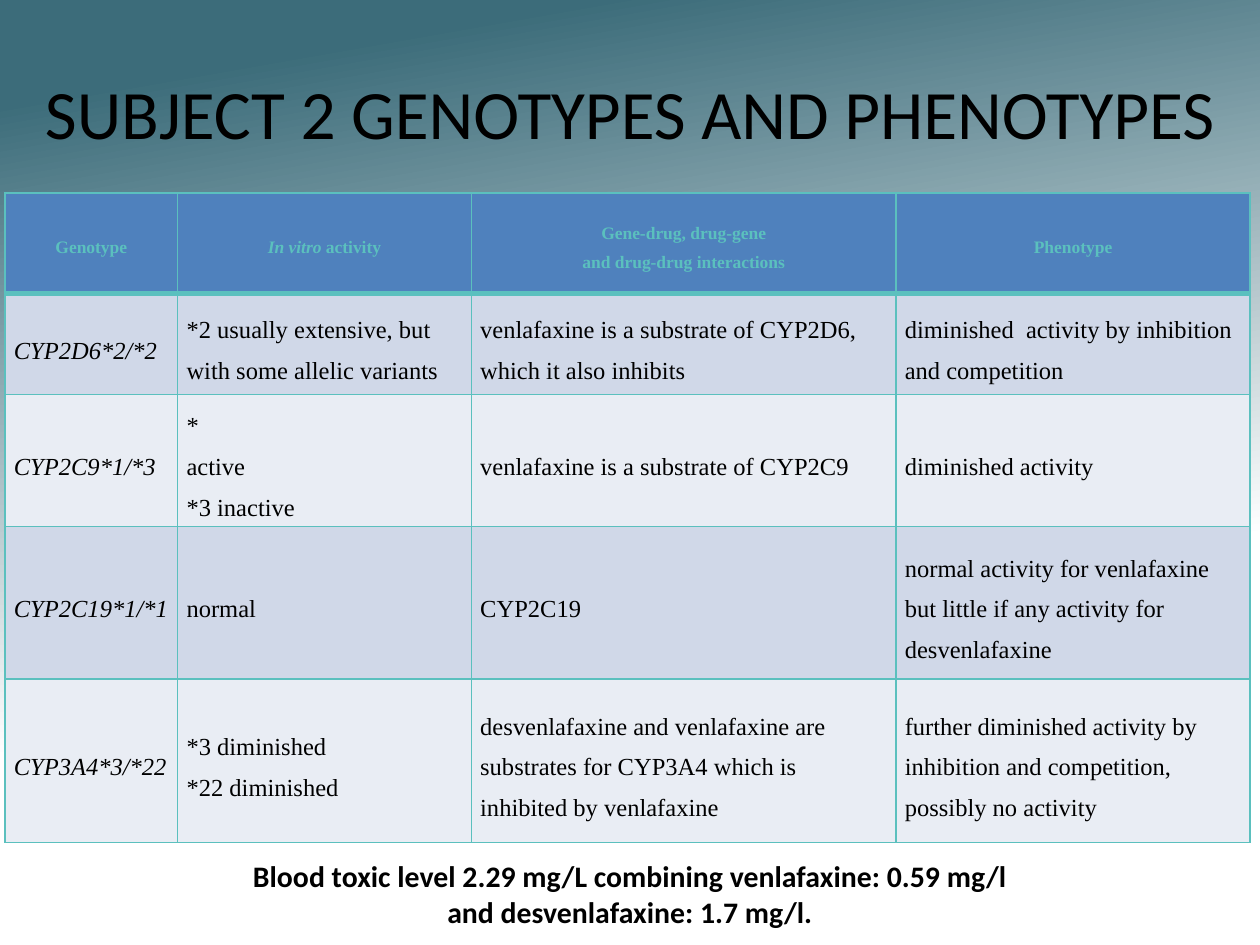
from lxml.etree import SubElement
from pptx import Presentation
from pptx.dml.color import RGBColor
from pptx.enum.text import MSO_ANCHOR, PP_ALIGN
from pptx.oxml import parse_xml
from pptx.oxml.ns import nsdecls
from pptx.util import Cm, Pt

BLACK = RGBColor(0x00, 0x00, 0x00)
WHITE = RGBColor(0xFF, 0xFF, 0xFF)
DEEP_TEAL = RGBColor(0x3C, 0x6C, 0x7A)
TURQUOISE = RGBColor(0x5B, 0xC0, 0xBE)
HEADER_BLUE = RGBColor(0x4F, 0x81, 0xBD)
BANDS = [RGBColor(0xD0, 0xD8, 0xE8), RGBColor(0xE9, 0xED, 0xF4)]

COLUMN_WIDTHS = [3.48, 5.92, 8.56, 7.14]
ROW_HEIGHTS = [2.03, 2.03, 2.03, 3.07, 3.3]
HEADINGS = ["Genotype", "In vitro activity",
            "Gene-drug, drug-gene\nand drug-drug interactions", "Phenotype"]
GENOTYPES = [
    ["CYP2D6*2/*2", "*2 usually extensive, but with some allelic variants",
     "venlafaxine is a substrate of CYP2D6, which it also inhibits",
     "diminished  activity by inhibition and competition"],
    ["CYP2C9*1/*3", "*\nactive\n*3 inactive",
     "venlafaxine is a substrate of CYP2C9", "diminished activity"],
    ["CYP2C19*1/*1", "normal", "CYP2C19",
     "normal activity for venlafaxine but little if any activity for desvenlafaxine"],
    ["CYP3A4*3/*22", "*3 diminished\n*22 diminished",
     "desvenlafaxine and venlafaxine are substrates for CYP3A4 which is inhibited by venlafaxine",
     "further diminished activity by inhibition and competition, possibly no activity"],
]


def style_paragraphs(frame, font_name, size, color, bold=False, italic=False,
                     align=PP_ALIGN.LEFT, spacing=1.0):
    for paragraph in frame.paragraphs:
        paragraph.alignment = align
        paragraph.line_spacing = spacing
        font = paragraph.font
        font.name, font.size = font_name, Pt(size)
        font.bold, font.italic = bold, italic
        font.color.rgb = color


def add_borders(cell, widths):
    """Draw the left, right, top and bottom borders, widths in points."""
    properties = cell._tc.get_or_add_tcPr()
    for index, (side, width) in enumerate(zip("LRTB", widths)):
        border = parse_xml(f'<a:ln{side} {nsdecls("a")} w="{Pt(width)}"><a:solidFill>'
                           f'<a:srgbClr val="{TURQUOISE}"/></a:solidFill></a:ln{side}>')
        properties.insert(index, border)


def fill_background(slide):
    fill = slide.background.fill
    fill.gradient()
    fill.gradient_angle = 280
    for stop, position, color in zip(fill.gradient_stops, (0.09, 0.65), (DEEP_TEAL, WHITE)):
        stop.position = position
        stop.color.rgb = color


def add_centred_text(slide, box, text, size, bold=False, anchor=MSO_ANCHOR.TOP):
    frame = slide.shapes.add_textbox(*map(Cm, box)).text_frame
    frame.word_wrap = True
    frame.vertical_anchor = anchor
    frame.text = text
    style_paragraphs(frame, "Calibri", size, BLACK, bold, align=PP_ALIGN.CENTER)


def add_genotype_table(slide, left, top):
    rows = [HEADINGS] + GENOTYPES
    table = slide.shapes.add_table(
        len(rows), len(HEADINGS), Cm(left), Cm(top),
        Cm(sum(COLUMN_WIDTHS)), Cm(sum(ROW_HEIGHTS))).table
    table.first_row = table.horz_banding = False
    for column, width in zip(table.columns, COLUMN_WIDTHS):
        column.width = Cm(width)

    for r, texts in enumerate(rows):
        table.rows[r].height = Cm(ROW_HEIGHTS[r])
        for c, text in enumerate(texts):
            cell = table.cell(r, c)
            cell.vertical_anchor = MSO_ANCHOR.MIDDLE
            cell.margin_left = cell.margin_right = Cm(0.18)
            cell.margin_top = cell.margin_bottom = 0
            cell.fill.solid()
            cell.fill.fore_color.rgb = HEADER_BLUE if r == 0 else BANDS[(r - 1) % 2]
            # The rule below the header belongs to both rows it separates
            add_borders(cell, (1, 1, 3 if r == 1 else 1, 3 if r == 0 else 1))
            cell.text = text
            if r == 0:
                style_paragraphs(cell.text_frame, "Times New Roman", 10, TURQUOISE,
                                 bold=True, align=PP_ALIGN.CENTER, spacing=1.5)
            else:
                style_paragraphs(cell.text_frame, "Times New Roman", 14, BLACK,
                                 italic=c == 0, spacing=1.5)

    # Only the Latin words of the second heading are italic
    heading = table.cell(0, 1).text_frame.paragraphs[0]
    latin = heading.runs[0]
    latin.text = "In vitro"
    latin.font.italic = True
    heading.add_run().text = " activity"


def main():
    presentation = Presentation()
    presentation.slide_width, presentation.slide_height = Cm(25.4), Cm(19.05)
    slide = presentation.slides.add_slide(presentation.slide_layouts[6])
    fill_background(slide)
    # Title
    add_centred_text(slide, (0, 0.76, 25.4, 2.97), "SUBJECT 2 GENOTYPES AND PHENOTYPES",
                     39.6, anchor=MSO_ANCHOR.MIDDLE)
    add_genotype_table(slide, 0.1, 3.89)
    # Blood level note
    add_centred_text(slide, (0, 17.17, 25.4, 1.88),
                     "Blood toxic level 2.29 mg/L combining venlafaxine: 0.59 mg/l\n"
                     "and desvenlafaxine: 1.7 mg/l.", 17, bold=True)
    presentation.save("out.pptx")


if __name__ == "__main__":
    main()
